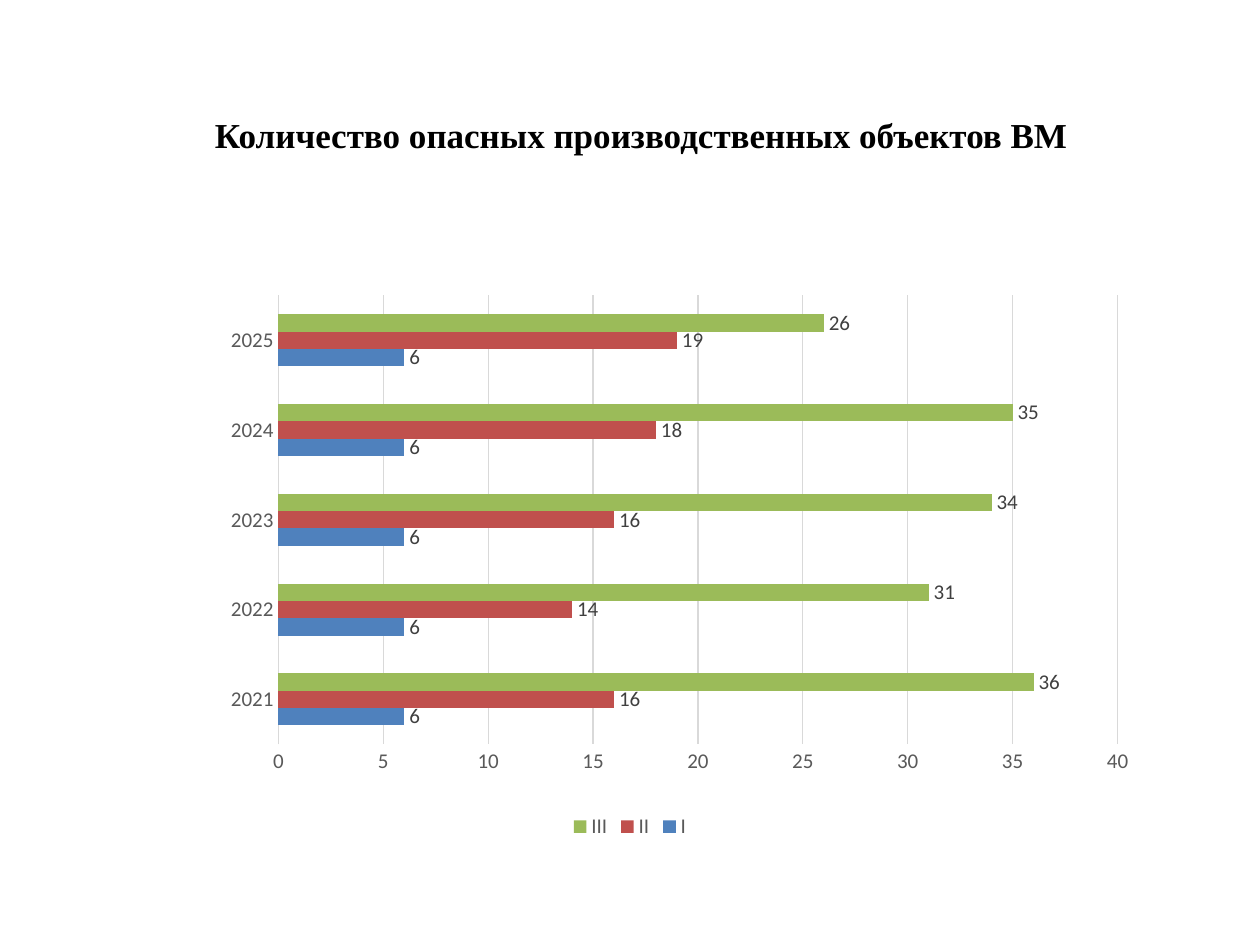
from lxml import etree
from pptx import Presentation
from pptx.chart.data import CategoryChartData
from pptx.dml.color import RGBColor
from pptx.enum.chart import XL_CHART_TYPE, XL_LABEL_POSITION, XL_LEGEND_POSITION, XL_TICK_MARK
from pptx.enum.text import MSO_ANCHOR, PP_ALIGN
from pptx.oxml.ns import qn
from pptx.util import Inches, Pt

COLORS = {
    "title": "000000",
    "axis": "595959",
    "label": "404040",
    "grid": "D9D9D9",
    "I": "4F81BD",
    "II": "C0504D",
    "III": "9BBB59",
}
YEARS = ["2021", "2022", "2023", "2024", "2025"]
OBJECTS_BY_CLASS = {
    "I": [6, 6, 6, 6, 6],
    "II": [16, 14, 16, 18, 19],
    "III": [36, 31, 34, 35, 26],
}
PLOT_LAYOUT = {
    "layoutTarget": "inner",
    "xMode": "edge",
    "yMode": "edge",
    "x": 0.19,
    "y": 0.12,
    "w": 0.74,
    "h": 0.72,
}


def format_font(font, color, size=12, name="Calibri", bold=False):
    font.name = name
    font.size = Pt(size)
    font.bold = bold
    font.color.rgb = RGBColor.from_string(COLORS[color])


def write_text(shape, text, align=PP_ALIGN.CENTER, anchor=MSO_ANCHOR.MIDDLE, **font_format):
    shape.text_frame.word_wrap = True
    shape.text_frame.vertical_anchor = anchor
    paragraph = shape.text_frame.paragraphs[0]
    paragraph.alignment = align
    run = paragraph.add_run()
    run.text = text
    format_font(run.font, **font_format)


presentation = Presentation()
presentation.slide_width = Inches(10)
presentation.slide_height = Inches(7.5)
slide = presentation.slides.add_slide(presentation.slide_layouts[5])

title = slide.shapes.title
title.left, title.top = Inches(0.59), Inches(0.44)
title.width, title.height = Inches(9), Inches(1.25)
write_text(title, "Количество опасных производственных объектов ВМ",
           color="title", size=20, name="Times New Roman", bold=True)

chart_data = CategoryChartData()
chart_data.categories = YEARS
for class_name, counts in OBJECTS_BY_CLASS.items():
    chart_data.add_series(class_name, counts)
chart = slide.shapes.add_chart(
    XL_CHART_TYPE.BAR_CLUSTERED,
    Inches(0.5), Inches(1.75), Inches(9), Inches(4.95), chart_data,
).chart
chart.has_title = False
format_font(chart.font, "title", size=10)

plot = chart.plots[0]
plot.gap_width = 219
plot.overlap = 0
plot.vary_by_categories = False
for series in plot.series:
    series.format.fill.solid()
    series.format.fill.fore_color.rgb = RGBColor.from_string(COLORS[series.name])
    labels = series.data_labels
    labels.show_value = True
    labels.position = XL_LABEL_POSITION.OUTSIDE_END
    format_font(labels.font, "label")

for axis in (chart.category_axis, chart.value_axis):
    axis.major_tick_mark = XL_TICK_MARK.NONE
    axis.minor_tick_mark = XL_TICK_MARK.NONE
    format_font(axis.tick_labels.font, "axis")

chart.value_axis.minimum_scale = 0
chart.value_axis.maximum_scale = 40
chart.value_axis.major_unit = 5
chart.value_axis.has_major_gridlines = True
chart.value_axis.format.line.fill.background()
for line in (chart.category_axis.format.line, chart.value_axis.major_gridlines.format.line):
    line.color.rgb = RGBColor.from_string(COLORS["grid"])
    line.width = Pt(0.75)

chart.has_legend = True
chart.legend.position = XL_LEGEND_POSITION.BOTTOM
chart.legend.include_in_layout = False
format_font(chart.legend.font, "axis")

plot_area = chart.element.find(".//" + qn("c:plotArea"))
for old_layout in plot_area.findall(qn("c:layout")):
    plot_area.remove(old_layout)
layout = etree.Element(qn("c:layout"))
manual_layout = etree.SubElement(layout, qn("c:manualLayout"))
for tag, value in PLOT_LAYOUT.items():
    etree.SubElement(manual_layout, qn(f"c:{tag}")).set("val", str(value))
plot_area.insert(0, layout)

presentation.save("out.pptx")
